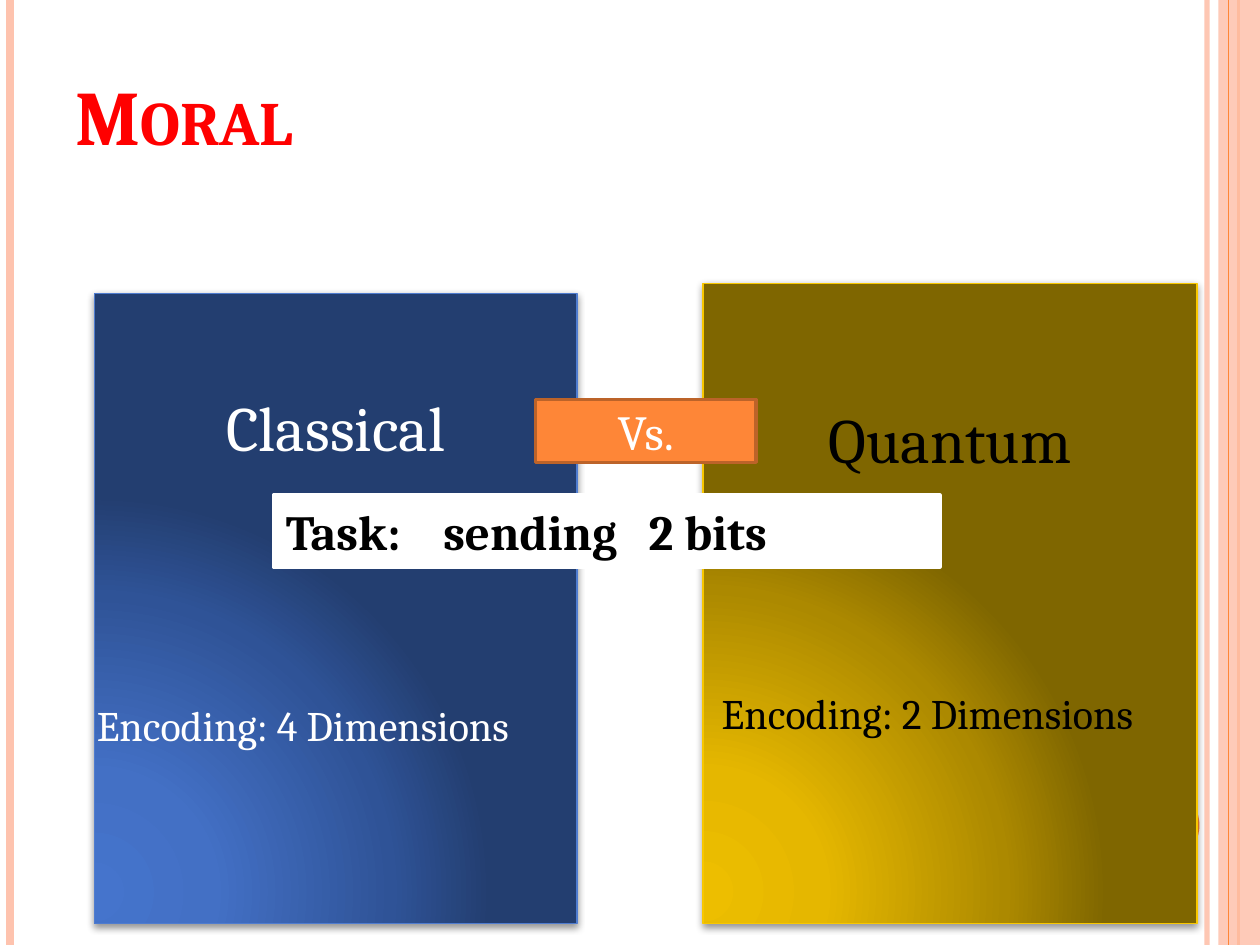
from lxml.etree import SubElement
from pptx import Presentation
from pptx.dml.color import RGBColor
from pptx.enum.shapes import MSO_CONNECTOR, MSO_SHAPE
from pptx.enum.text import MSO_ANCHOR, PP_ALIGN
from pptx.oxml.ns import qn
from pptx.util import Inches, Pt

COLORS = {
    "white": "FFFFFF", "black": "000000", "red": "FF0000",
    "peach": "FEC3AE", "orange": "FE8637", "rust": "BC6329",
    "blue line": "4F7CCF", "gold line": "F8C700",
}
FONT = "Cambria"
WIDTH, HEIGHT = 10, 7.5

# Content: vertical rules as (x, color, points, opacity %)
RULES_BEHIND = [(9.58, "peach", 3, 93), (0.08, "peach", 4.5, 100), (9.83, "orange", 1.5, 100)]
RULES_FRONT = [(9.75, "orange", 0.75, 100)]

# Panels: gradient stops run from the bright corner outwards
STOPS = (0, 30, 75, 100)
PANELS = [
    {"text": "Classical", "at": (0.75, 2.33, 3.83, 5), "inset": 0.75, "color": "white",
     "line": "blue line", "gradient": ("4574CC", "4370C5", "2F5397", "233E70")},
    {"text": "Quantum", "at": (5.58, 2.25, 3.92, 5.08), "inset": 0.93, "color": "black",
     "line": "gold line", "gradient": ("EDBE00", "E5B700", "AC8900", "7F6600")},
]
ENCODINGS = [
    ("Encoding: 4 Dimensions", (0.67, 5.5, 4.04, 0.5), "white"),
    ("Encoding: 2 Dimensions", (5.63, 5.41, 4.04, 0.5), "black"),
]
TASK = "Task:\tsending\t2 bits"
TASK_TABS = (1.25, 2.88)


def rgb(name):
    return RGBColor.from_string(COLORS[name])


def add_alpha(fill_element, percent):
    color = fill_element.find(".//" + qn("a:srgbClr"))
    SubElement(color, qn("a:alpha"), val=str(percent * 1000))


def add_rule(page, x, color, points, opacity):
    rule = page.shapes.add_connector(
        MSO_CONNECTOR.STRAIGHT, Inches(x), 0, Inches(x), Inches(HEIGHT))
    rule.line.color.rgb = rgb(color)
    rule.line.width = Pt(points)
    if opacity < 100:
        add_alpha(rule.line._ln, opacity)
    SubElement(rule._element.spPr, qn("a:effectLst"))


def add_block(page, at, fill=None, line=None, points=1, kind=MSO_SHAPE.RECTANGLE):
    block = page.shapes.add_shape(kind, *map(Inches, at))
    block.shadow.inherit = False
    if fill:
        block.fill.solid()
        block.fill.fore_color.rgb = rgb(fill)
    if line:
        block.line.color.rgb = rgb(line)
        block.line.width = Pt(points)
    else:
        block.line.fill.background()
    return block


def write(box, text, size, color, align=PP_ALIGN.LEFT, bold=False, **frame_format):
    frame = box.text_frame
    for name, value in {"word_wrap": True, **frame_format}.items():
        setattr(frame, name, value)
    para = frame.paragraphs[0]
    para.alignment = align
    span = para.add_run()
    span.text = text
    for name, value in {"name": FONT, "size": Pt(size), "bold": bold}.items():
        setattr(span.font, name, value)
    span.font.color.rgb = rgb(color)
    return para, span


def add_text(page, at, *args, **formats):
    return write(page.shapes.add_textbox(*map(Inches, at)), *args, **formats)


def add_glow_fill(block, colors):
    block.fill.gradient()
    gradient = block._element.spPr.find(qn("a:gradFill"))
    for child in list(gradient):
        gradient.remove(child)
    stops = SubElement(gradient, qn("a:gsLst"))
    for position, color in zip(STOPS, colors):
        stop = SubElement(stops, qn("a:gs"), pos=str(position * 1000))
        SubElement(stop, qn("a:srgbClr"), val=color)
    circle = SubElement(gradient, qn("a:path"), {"path": "circle"})
    SubElement(circle, qn("a:fillToRect"), l="5000", t="100000", r="120000", b="10000")


def add_shadow(block):
    effects = block._element.spPr.find(qn("a:effectLst"))
    shadow = SubElement(effects, qn("a:outerShdw"), blurRad=str(Pt(4)),
                        dist=str(Pt(1.6)), dir="5400000", rotWithShape="0")
    SubElement(shadow, qn("a:srgbClr"), val=COLORS["black"])
    add_alpha(effects, 42)


def main():
    deck = Presentation()
    deck.slide_width, deck.slide_height = Inches(WIDTH), Inches(HEIGHT)
    page = deck.slides.add_slide(deck.slide_layouts[6])

    # Side decoration
    for rule in RULES_BEHIND:
        add_rule(page, *rule)
    band = add_block(page, (9.67, 0, 0.33, HEIGHT), "peach")
    add_alpha(band._element.spPr.find(qn("a:solidFill")), 87)
    for rule in RULES_FRONT:
        add_rule(page, *rule)
    add_block(page, (8.92, 6.25, 0.6, 0.6), "orange", kind=MSO_SHAPE.OVAL)

    # Title
    _, span = add_text(page, (0.5, 0.08, 8.17, 1.25), "Moral", 44, "red", bold=True,
                       vertical_anchor=MSO_ANCHOR.BOTTOM)
    span.font._element.set("cap", "small")

    # Compared panels
    for panel in PANELS:
        block = add_block(page, panel["at"], line=panel["line"])
        add_glow_fill(block, panel["gradient"])
        add_shadow(block)
        write(block, panel["text"], 36, panel["color"], PP_ALIGN.CENTER,
              vertical_anchor=MSO_ANCHOR.TOP, margin_top=Inches(panel["inset"]))

    # Labels across both panels
    versus = add_block(page, (4.25, 3.17, 1.75, 0.5), "orange", "rust", 2)
    write(versus, "Vs.", 28, "white", PP_ALIGN.CENTER, vertical_anchor=MSO_ANCHOR.MIDDLE)
    task = add_block(page, (2.17, 3.93, 5.29, 0.57), "white", "white", 2)
    para, _ = write(task, TASK, 28, "black", bold=True, vertical_anchor=MSO_ANCHOR.TOP)
    tabs = SubElement(para._p.get_or_add_pPr(), qn("a:tabLst"))
    for position in TASK_TABS:
        SubElement(tabs, qn("a:tab"), pos=str(Inches(position)), algn="l")

    # Encoding notes
    for text, at, color in ENCODINGS:
        add_text(page, at, text, 24, color, word_wrap=False)

    deck.save("out.pptx")


if __name__ == "__main__":
    main()
